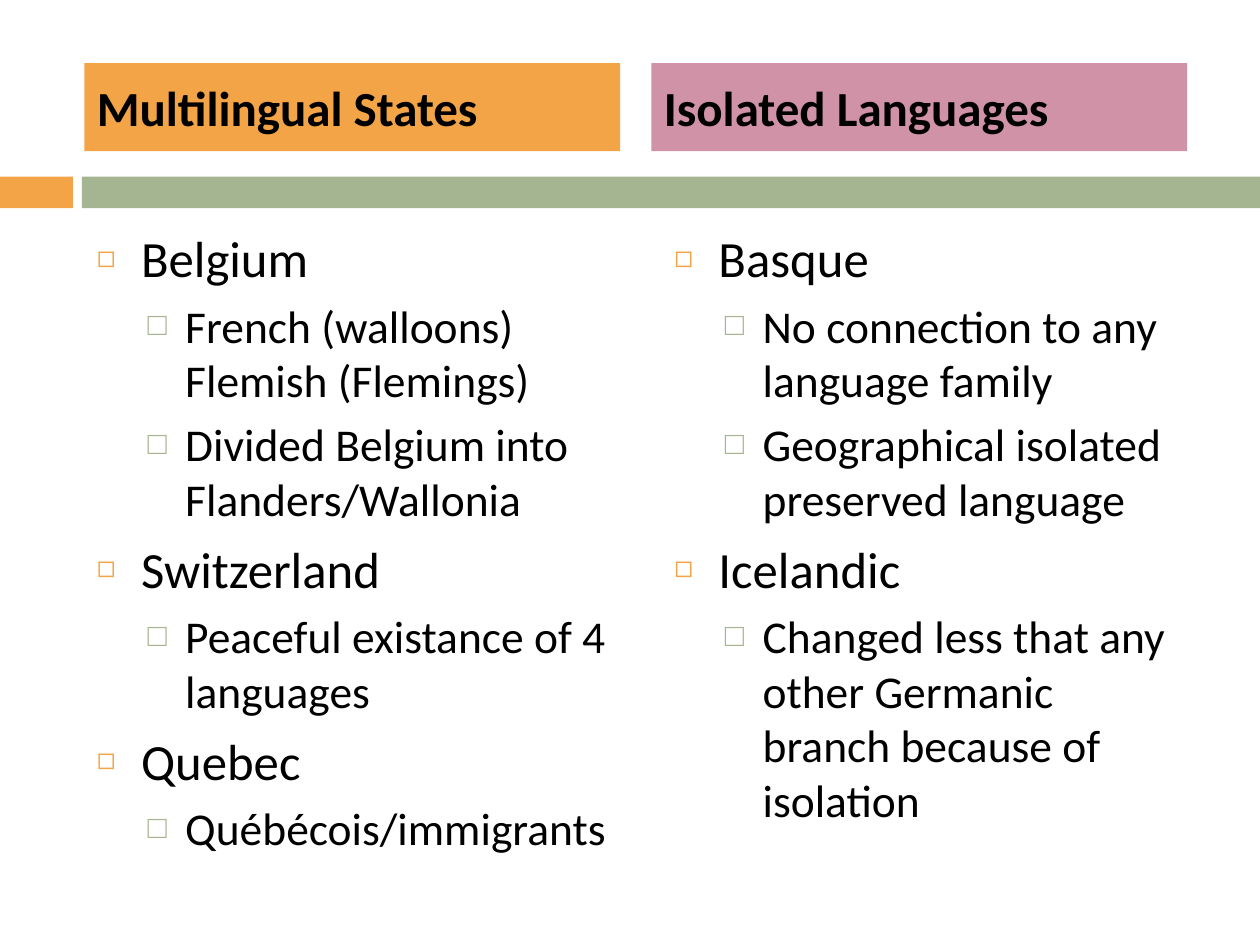
from lxml.etree import SubElement
from pptx import Presentation
from pptx.dml.color import RGBColor
from pptx.enum.shapes import MSO_SHAPE
from pptx.enum.text import MSO_ANCHOR, MSO_AUTO_SIZE, PP_ALIGN
from pptx.oxml.ns import qn
from pptx.util import Cm, Pt

COLORS = {"orange": "F3A447", "green": "A5B592", "pink": "D092A7", "text": "000000"}

HEADING = {"size": Pt(28), "bold": True, "name": "Calibri"}
LEVELS = [
    {"font": {"size": Pt(29), "bold": False, "name": "Calibri"}, "before": 7,
     "margin": 0.89, "hang": 0.89, "char": "◻", "color": "orange", "percent": 60},
    {"font": {"size": Pt(26), "bold": False, "name": "Calibri"}, "before": 5.5,
     "margin": 1.78, "hang": 0.76, "char": "□", "color": "green", "percent": 70},
]

BARS = [(0, 1.47, "orange"), (1.65, 23.75, "green")]
COLUMNS = [
    {"heading": "Multilingual States", "color": "orange", "heading_left": 1.7, "list_left": 1.7,
     "items": [
         (0, "Belgium"),
         (1, "French (walloons) Flemish (Flemings)"),
         (1, "Divided Belgium into Flanders/Wallonia"),
         (0, "Switzerland"),
         (1, "Peaceful existance of 4 languages"),
         (0, "Quebec"),
         (1, "Québécois/immigrants"),
     ]},
    {"heading": "Isolated Languages", "color": "pink", "heading_left": 13.13, "list_left": 13.34,
     "items": [
         (0, "Basque"),
         (1, "No connection to any language family"),
         (1, "Geographical isolated preserved language"),
         (0, "Icelandic"),
         (1, "Changed less that any other Germanic branch because of isolation"),
     ]},
]


def set_attrs(obj, values):
    """Set every attribute in a dict of format values."""
    for name, value in values.items():
        setattr(obj, name, value)


def fill(sp, color):
    """Give a shape a solid fill from the palette."""
    sp.fill.solid()
    sp.fill.fore_color.rgb = RGBColor.from_string(COLORS[color])


def add_bar(s, left, width, color):
    """Add one piece of the divider band."""
    sp = s.shapes.add_shape(MSO_SHAPE.RECTANGLE, Cm(left), Cm(3.56), Cm(width), Cm(0.64))
    sp.shadow.inherit = False
    sp.line.fill.background()
    fill(sp, color)


def place(sp, left, top, width, height, anchor):
    """Position a placeholder and return its text frame."""
    set_attrs(sp, {"left": Cm(left), "top": Cm(top), "width": Cm(width), "height": Cm(height)})
    tf = sp.text_frame
    set_attrs(tf, {"word_wrap": True, "auto_size": MSO_AUTO_SIZE.NONE, "vertical_anchor": anchor})
    return tf


def write(p, text, font, before):
    """Write a formatted run into a paragraph."""
    set_attrs(p, {"space_before": Pt(before), "alignment": PP_ALIGN.LEFT})
    r = p.add_run()
    r.text = text
    set_attrs(r.font, font)
    r.font.color.rgb = RGBColor.from_string(COLORS["text"])


def add_bullet(p, level):
    """Give a paragraph the bullet and indents of its level."""
    pPr = p._p.get_or_add_pPr()
    pPr.set("marL", str(Cm(level["margin"])))
    pPr.set("indent", str(-Cm(level["hang"])))
    color = SubElement(pPr, qn("a:buClr"))
    SubElement(color, qn("a:srgbClr"), val=COLORS[level["color"]])
    SubElement(pPr, qn("a:buSzPct"), val=str(level["percent"] * 1000))
    SubElement(pPr, qn("a:buChar"), char=level["char"])


def fill_heading(sp, column):
    """Format a column heading on its coloured box."""
    tf = place(sp, column["heading_left"], 1.27, 10.8, 1.78, MSO_ANCHOR.MIDDLE)
    fill(sp, column["color"])
    write(tf.paragraphs[0], column["heading"], HEADING, 7)


def fill_list(sp, column):
    """Write the two-level bullet list of a column."""
    tf = place(sp, column["list_left"], 4.45, 10.8, 12.27, MSO_ANCHOR.TOP)
    for i, (depth, text) in enumerate(column["items"]):
        p = tf.add_paragraph() if i else tf.paragraphs[0]
        p.level = depth
        level = LEVELS[depth]
        write(p, text, level["font"], level["before"])
        add_bullet(p, level)


def main():
    """Build the comparison slide and save it."""
    prs = Presentation()
    set_attrs(prs, {"slide_width": Cm(25.4), "slide_height": Cm(19.05)})
    s = prs.slides.add_slide(prs.slide_layouts.get_by_name("Comparison"))
    title = s.shapes.title._element
    title.getparent().remove(title)
    for bar in BARS:
        add_bar(s, *bar)
    holders = {sp.placeholder_format.idx: sp for sp in s.placeholders}
    for i, column in enumerate(COLUMNS):
        fill_heading(holders[2 * i + 1], column)
        fill_list(holders[2 * i + 2], column)
    prs.save("out.pptx")


if __name__ == "__main__":
    main()
